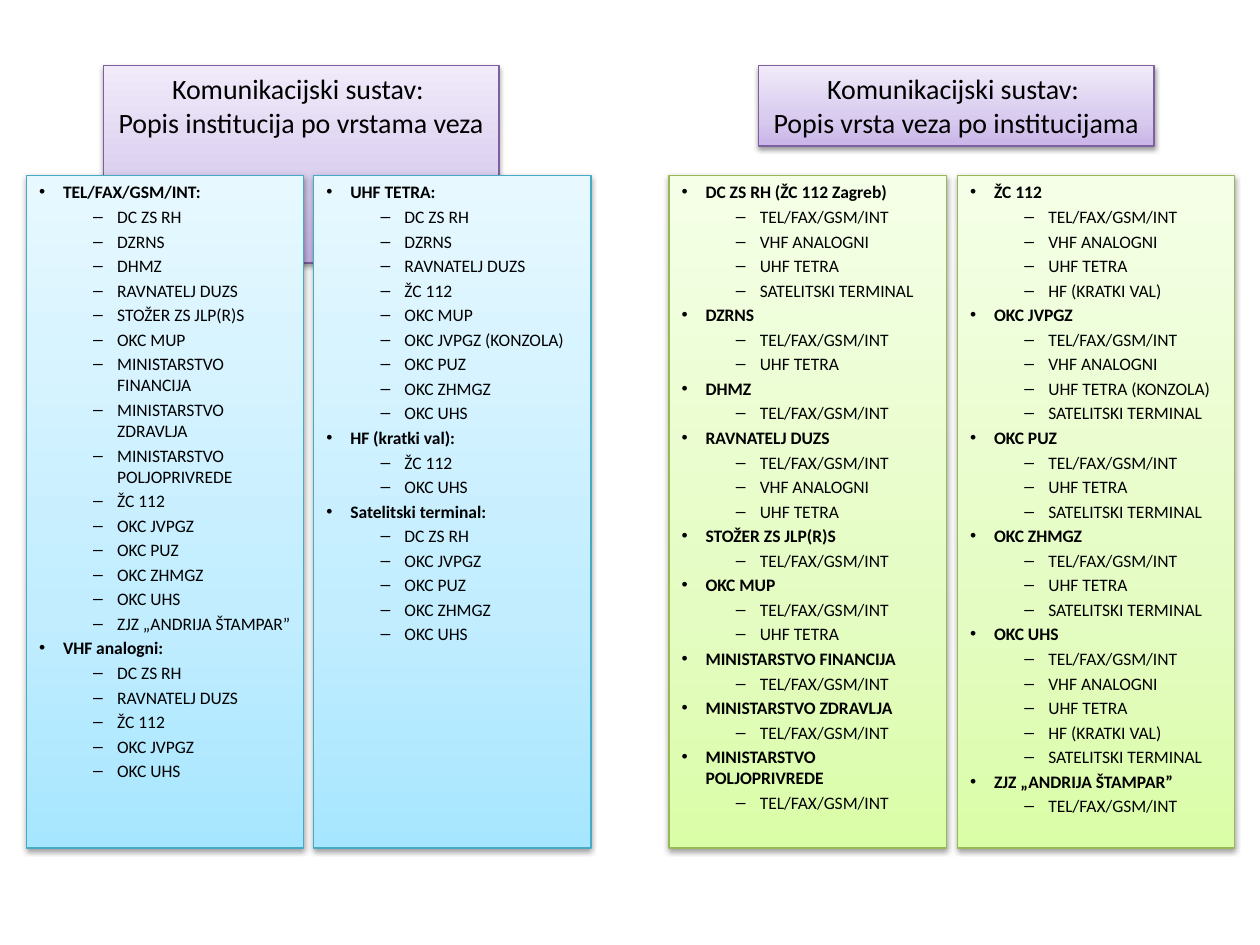
from copy import deepcopy
from pptx import Presentation, util as u
from pptx.dml.color import RGBColor
from pptx.enum import shapes, text
from pptx.oxml import parse_xml
from pptx.oxml.ns import nsdecls, qn

HUES = {
    "blue": ["A7E6FF", "C1EDFF", "E7F8FF", "46AAC5"],
    "green": ["DAFDA7", "E4FCC2", "F5FFE7", "98B955"],
    "violet": ["C9B5E8", "D8CBEE", "F0EAF9", "7D60A0"],
    "ink": "000000",
}
TEL = "TEL/FAX/GSM/INT"
VHF = "VHF ANALOGNI"
UHF = "UHF TETRA"
SAT = "SATELITSKI TERMINAL"
HF = "HF (KRATKI VAL)"

HEADS = [
    (0.82, "Popis institucija po vrstama veza"),
    (6.02, "Popis vrsta veza po institucijama"),
]
LISTS = [
    (0.21, "blue", {
        "TEL/FAX/GSM/INT:": [
            "DC ZS RH", "DZRNS", "DHMZ", "RAVNATELJ DUZS", "STOŽER ZS JLP(R)S",
            "OKC MUP", "MINISTARSTVO FINANCIJA", "MINISTARSTVO ZDRAVLJA",
            "MINISTARSTVO POLJOPRIVREDE", "ŽC 112", "OKC JVPGZ", "OKC PUZ",
            "OKC ZHMGZ", "OKC UHS", "ZJZ „ANDRIJA ŠTAMPAR”"],
        "VHF analogni:": [
            "DC ZS RH", "RAVNATELJ DUZS", "ŽC 112", "OKC JVPGZ", "OKC UHS"],
    }),
    (2.49, "blue", {
        "UHF TETRA:": [
            "DC ZS RH", "DZRNS", "RAVNATELJ DUZS", "ŽC 112", "OKC MUP",
            "OKC JVPGZ (KONZOLA)", "OKC PUZ", "OKC ZHMGZ", "OKC UHS"],
        "HF (kratki val):": ["ŽC 112", "OKC UHS"],
        "Satelitski terminal:": [
            "DC ZS RH", "OKC JVPGZ", "OKC PUZ", "OKC ZHMGZ", "OKC UHS"],
    }),
    (5.31, "green", {
        "DC ZS RH (ŽC 112 Zagreb)": [TEL, VHF, UHF, SAT],
        "DZRNS": [TEL, UHF],
        "DHMZ": [TEL],
        "RAVNATELJ DUZS": [TEL, VHF, UHF],
        "STOŽER ZS JLP(R)S": [TEL],
        "OKC MUP": [TEL, UHF],
        "MINISTARSTVO FINANCIJA": [TEL],
        "MINISTARSTVO ZDRAVLJA": [TEL],
        "MINISTARSTVO POLJOPRIVREDE": [TEL],
    }),
    (7.6, "green", {
        "ŽC 112": [TEL, VHF, UHF, HF],
        "OKC JVPGZ": [TEL, VHF, "UHF TETRA (KONZOLA)", SAT],
        "OKC PUZ": [TEL, UHF, SAT],
        "OKC ZHMGZ": [TEL, UHF, SAT],
        "OKC UHS": [TEL, VHF, UHF, HF, SAT],
        "ZJZ „ANDRIJA ŠTAMPAR”": [TEL],
    }),
]


def write(box, words, size=10, bold=False, level=0, mark=None, left=0.19,
          gap=2, align=text.PP_ALIGN.LEFT):
    frame = box.text_frame
    first = not frame.text
    para = frame.paragraphs[0] if first else frame.add_paragraph()
    if mark:
        props = para._p.get_or_add_pPr()
        props.set("marL", str(u.Inches(left)))
        props.set("indent", str(u.Inches(-0.19)))
        props.append(parse_xml(f'<a:buChar {nsdecls("a")} char="{mark}"/>'))
    para.level = level
    para.alignment = align
    para.space_before = u.Pt(0 if first else gap)
    run = para.add_run()
    run.text = words
    run.font.name = "Calibri"
    run.font.size = u.Pt(size)
    run.font.bold = bold
    run.font.color.rgb = RGBColor.from_string(HUES["ink"])


def dress(box, hue, left, top, width, height):
    box.left, box.top = u.Inches(left), u.Inches(top)
    box.width, box.height = u.Inches(width), u.Inches(height)
    *shades, edge = HUES[hue]
    box.fill.gradient()
    box.fill.gradient_angle = 90
    props = box._element.spPr
    stops = props.find(".//" + qn("a:gsLst"))
    stops.insert(1, deepcopy(stops[0]))
    for stop, place, shade in zip(box.fill.gradient_stops, (0, 0.35, 1), shades):
        stop.position = place
        stop.color.rgb = RGBColor.from_string(shade)
    box.line.color.rgb = RGBColor.from_string(edge)
    box.line.width = u.Pt(0.75)
    box.shadow.inherit = False
    props.find(qn("a:effectLst")).append(parse_xml(
        f'<a:outerShdw {nsdecls("a")} blurRad="{u.Pt(3.1)}" dist="{u.Pt(1.6)}" '
        f'dir="5400000" rotWithShape="0"><a:srgbClr val="{HUES["ink"]}">'
        '<a:alpha val="38000"/></a:srgbClr></a:outerShdw>'))


deck = Presentation()
deck.slide_width, deck.slide_height = u.Inches(10), u.Inches(7.5)
slide = deck.slides.add_slide(deck.slide_layouts[4])
title, *bodies = slide.placeholders

for body, (left, hue, groups) in zip(bodies, LISTS):
    dress(body, hue, left, 1.39, 2.2, 5.34)
    body.text_frame.word_wrap = True
    body.text_frame.auto_size = text.MSO_AUTO_SIZE.NONE
    body.text_frame.vertical_anchor = text.MSO_ANCHOR.TOP
    for head, items in groups.items():
        write(body, head, bold=True, mark="•")
        for item in items:
            write(body, item, level=1, mark="–", left=0.62)

other = slide.shapes.add_shape(shapes.MSO_SHAPE.RECTANGLE, 0, 0, 0, 0)
for box, (left, words) in zip((title, other), HEADS):
    dress(box, "violet", left, 0.52, 3.14, 0.64)
    box.text_frame.word_wrap = False
    box.text_frame.auto_size = text.MSO_AUTO_SIZE.SHAPE_TO_FIT_TEXT
    box.text_frame.vertical_anchor = text.MSO_ANCHOR.TOP
    for line in ("Komunikacijski sustav: ", words):
        write(box, line, size=16, gap=0, align=text.PP_ALIGN.CENTER)

deck.save("out.pptx")
